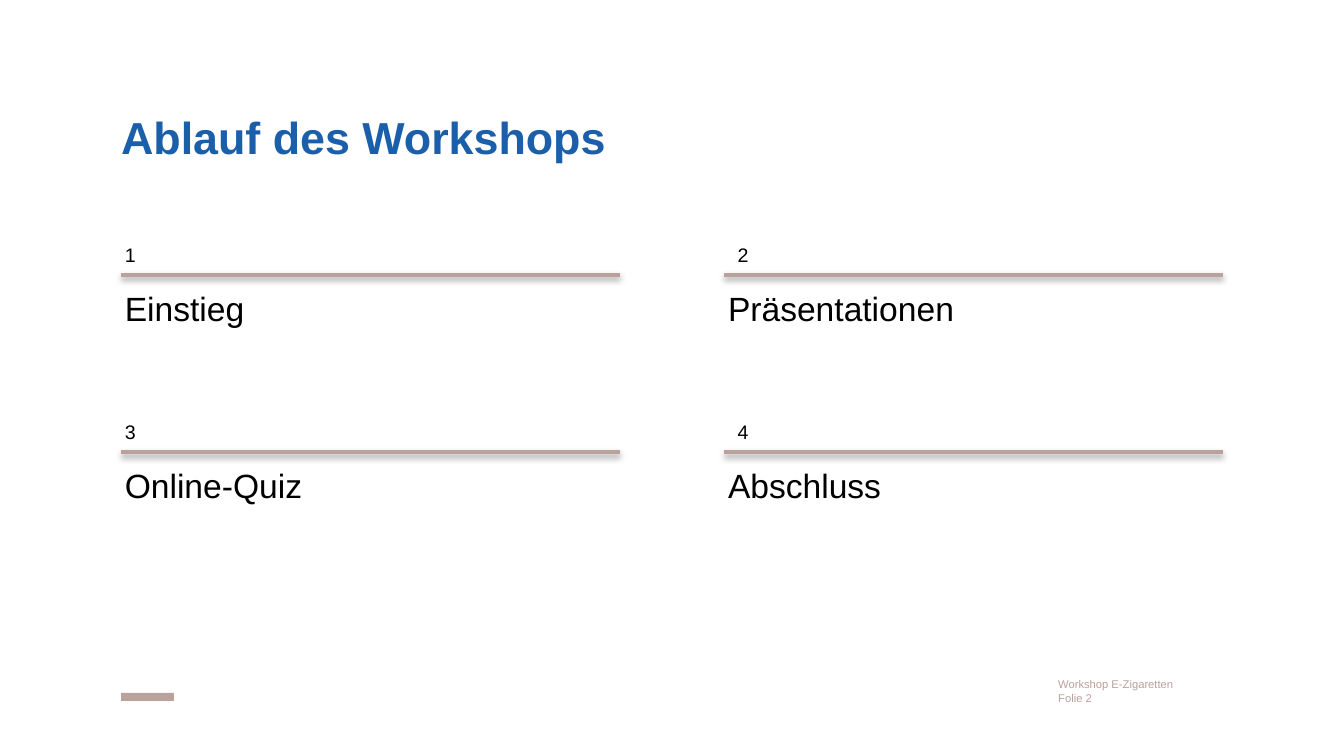
from pptx import Presentation
from pptx.dml.color import RGBColor
from pptx.enum.shapes import MSO_CONNECTOR, MSO_SHAPE
from pptx.enum.text import MSO_AUTO_SIZE
from pptx.oxml import parse_xml
from pptx.oxml.ns import nsdecls
from pptx.util import Cm, Pt

BLUE, ROSE, BLACK = "1B5FAA", "BAA19B", "000000"
SHADOW = (
    f'<a:effectLst {nsdecls("a")}>'
    '<a:outerShdw blurRad="40000" dist="20000" dir="5400000" rotWithShape="0">'
    '<a:srgbClr val="000000"><a:alpha val="38000"/></a:srgbClr>'
    '</a:outerShdw></a:effectLst>'
)


def color(code):
    """Turn a hex string into a colour."""
    return RGBColor.from_string(code)


class Deck:
    """Hold the style and the current slide."""

    def __init__(self, font):
        """Open a deck with one blank slide."""
        self.font = font
        self.prs = Presentation()
        self.prs.slide_width, self.prs.slide_height = Cm(25.4), Cm(14.29)
        self.slide = self.prs.slides.add_slide(self.prs.slide_layouts[6])

    def text(self, lines, x, y, w, h, size, tint=BLACK, bold=False, wrap=True, lead=None):
        """Add text; a fixed line height also drops the margins."""
        box = self.slide.shapes.add_textbox(Cm(x), Cm(y), Cm(w), Cm(h))
        frame = box.text_frame
        frame.text = "\n".join(lines)
        frame.word_wrap = wrap
        if lead:
            frame.margin_left = frame.margin_right = 0
            frame.margin_top = frame.margin_bottom = 0
        else:
            frame.auto_size = MSO_AUTO_SIZE.SHAPE_TO_FIT_TEXT
        for para in frame.paragraphs:
            para.font.name, para.font.size = self.font, Pt(size)
            para.font.bold, para.font.color.rgb = bold, color(tint)
            if lead:
                para.line_spacing = Pt(lead)

    def bar(self, x, y, w, h, tint):
        """Add a plain filled bar."""
        bar = self.slide.shapes.add_shape(MSO_SHAPE.RECTANGLE, Cm(x), Cm(y), Cm(w), Cm(h))
        bar.shadow.inherit = False
        bar.fill.solid()
        bar.fill.fore_color.rgb = color(tint)
        bar.line.fill.background()

    def rule(self, x, y, w, tint):
        """Add a level line with a soft shadow."""
        rule = self.slide.shapes.add_connector(
            MSO_CONNECTOR.STRAIGHT, Cm(x), Cm(y), Cm(x + w), Cm(y))
        rule.line.color.rgb = color(tint)
        rule.line.width = Pt(2)
        rule._element.spPr.append(parse_xml(SHADOW))

    def save(self):
        """Write the deck."""
        self.prs.save("out.pptx")


def main():
    """Build the agenda slide."""
    deck = Deck("Arial")
    deck.text(["Workshop E-Zigaretten", "Folie 2"], 20, 12.8, 4.62, 0.64, 6, ROSE, lead=7.4)
    deck.bar(2.29, 13.1, 1, 0.15, ROSE)
    deck.text(["Ablauf des Workshops"], 2.29, 2.24, 21.5, 1.5, 24, BLUE, True, lead=24)

    steps = [("Einstieg", 2.79), ("Präsentationen", 4.83),
             ("Online-Quiz", 4.06), ("Abschluss", 3.43)]
    for i, (name, width) in enumerate(steps):
        row, col = divmod(i, 2)
        x, y = 2.29 + col * 11.4, 5.2 + row * 3.35
        deck.rule(x, y, 9.42, ROSE)
        deck.text([name], x - 0.18, y + 0.12, width, 1.03, 18, wrap=False)
        inset = 0 if col else 0.18
        deck.text([str(i + 1)], x - inset, y - 0.73, 0.76, 0.73, 10.5)
    deck.save()


if __name__ == "__main__":
    main()
